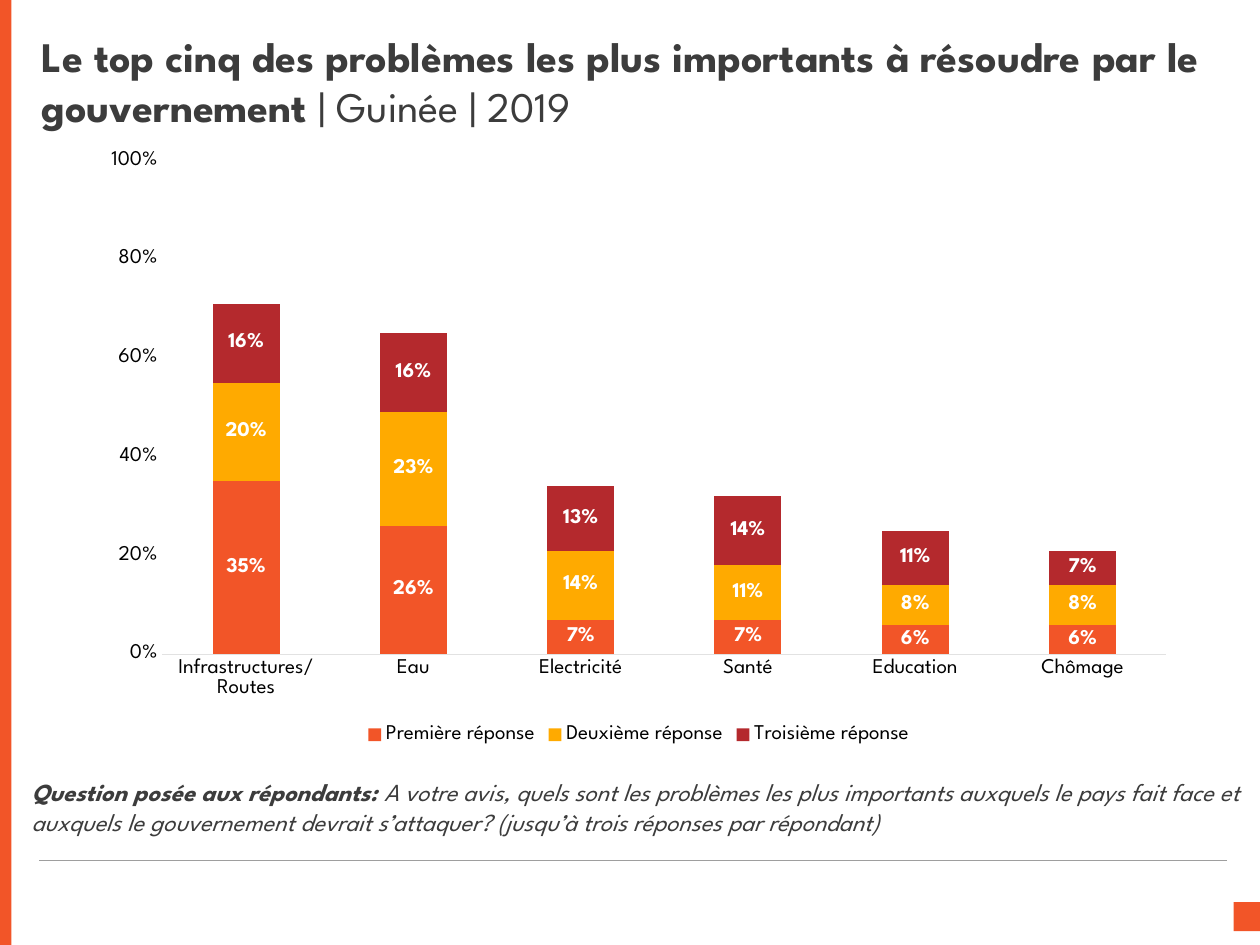
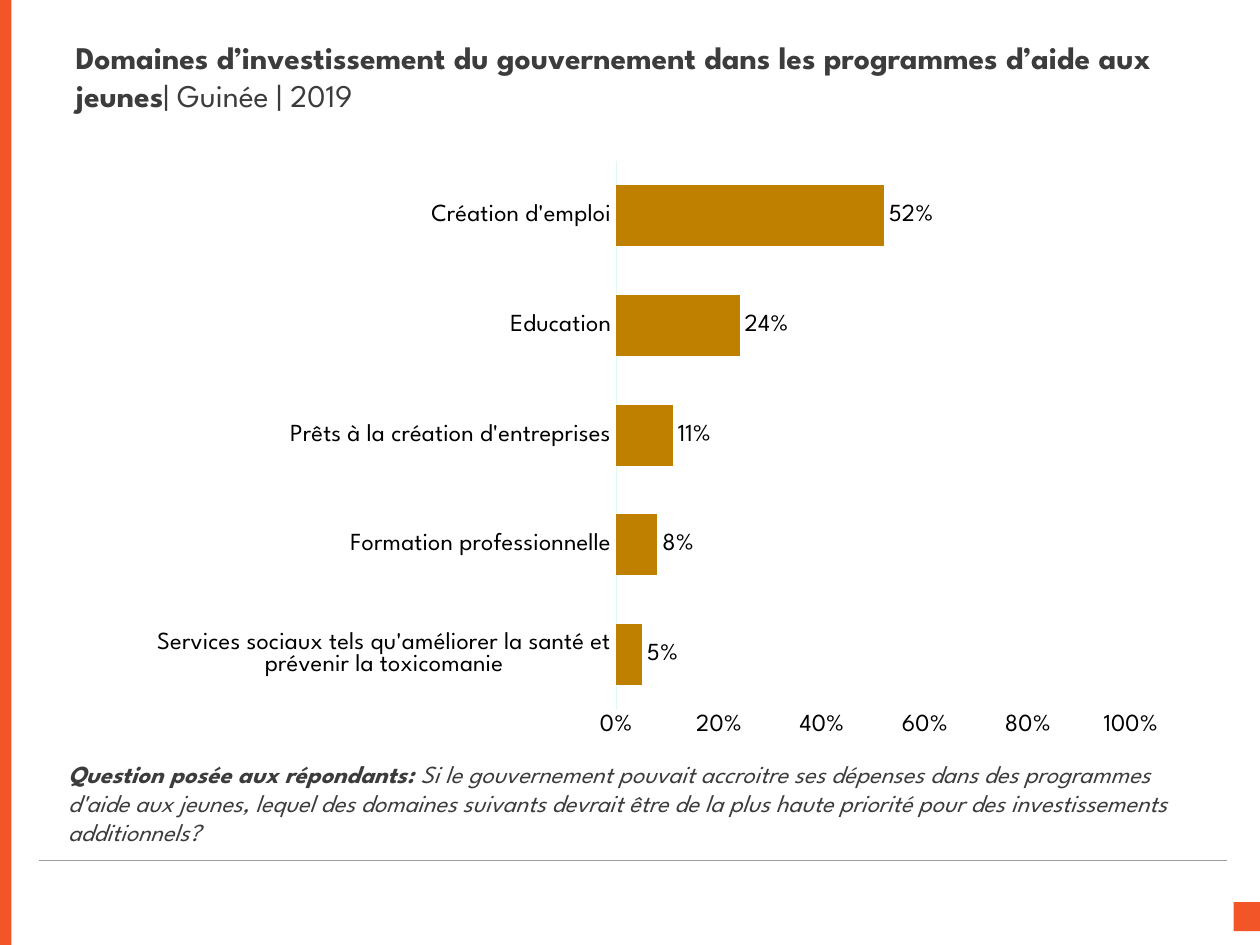
from lxml import etree
from pptx import Presentation
from pptx.chart.data import CategoryChartData
from pptx.dml.color import RGBColor
from pptx.enum.chart import XL_CHART_TYPE, XL_LABEL_POSITION, XL_LEGEND_POSITION, XL_TICK_MARK
from pptx.enum.shapes import MSO_CONNECTOR, MSO_SHAPE
from pptx.enum.text import MSO_ANCHOR, MSO_AUTO_SIZE, PP_ALIGN
from pptx.oxml.ns import qn
from pptx.util import Inches, Pt

COLUMNS = XL_CHART_TYPE.COLUMN_STACKED
BARS = XL_CHART_TYPE.BAR_CLUSTERED
CENTER = XL_LABEL_POSITION.CENTER
OUTSIDE = XL_LABEL_POSITION.OUTSIDE_END
BOTTOM = XL_LEGEND_POSITION.BOTTOM
NO_TICK = XL_TICK_MARK.NONE
RECTANGLE = MSO_SHAPE.RECTANGLE
STRAIGHT = MSO_CONNECTOR.STRAIGHT
TOP, MIDDLE = MSO_ANCHOR.TOP, MSO_ANCHOR.MIDDLE
LEFT = PP_ALIGN.LEFT
NO_FIT = MSO_AUTO_SIZE.NONE

FONT = "League Spartan"
ORANGE, AMBER, RED, OCHRE = "F25528", "FFAA00", "B4292D", "BF8000"
INK, RULE, BLACK, WHITE = "3C3C3C", "9E9E9E", "000000", "FFFFFF"
PERCENT = "0%"
PLACE = "| Guinée | 2019"
QUESTION = "Question posée aux répondants: "


def color(hex_text):
    return RGBColor.from_string(hex_text)


def inches(box):
    return [Inches(value) for value in box]


def format_font(font, size, ink, bold=False, italic=False):
    font.name = FONT
    font.size = Pt(size)
    font.bold = bold
    font.italic = italic
    font.color.rgb = color(ink)


def add_text(para, text, **style):
    span = para.add_run()
    span.text = text
    format_font(span.font, **style)


def fill_placeholder(holder, box, strong, plain, anchor, size, italic=False):
    holder.left, holder.top, holder.width, holder.height = inches(box)
    frame = holder.text_frame
    frame.word_wrap = True
    frame.auto_size = NO_FIT
    frame.vertical_anchor = anchor
    para = frame.paragraphs[0]
    para.alignment = LEFT
    para.line_spacing = 1.0
    para.space_before = Pt(0)
    settings = para._p.get_or_add_pPr()
    settings.set("marL", "0")
    settings.set("indent", "0")
    etree.SubElement(settings, qn("a:buNone"))
    add_text(para, strong, size=size, ink=INK, bold=True, italic=italic)
    add_text(para, plain, size=size, ink=INK, italic=italic)


def add_block(page, box):
    block = page.shapes.add_shape(RECTANGLE, *inches(box))
    block.shadow.inherit = False
    block.fill.solid()
    block.fill.fore_color.rgb = color(ORANGE)
    block.line.fill.background()


def add_frame(page):
    add_block(page, (9.79, 7.16, 0.22, 0.23))
    rule = page.shapes.add_connector(STRAIGHT, *inches((0.31, 6.83, 9.74, 6.83)))
    rule.line.color.rgb = color(RULE)
    rule.line.width = Pt(0.25)
    etree.SubElement(rule._element.spPr, qn("a:effectLst"))
    add_block(page, (0, 0, 0.09, 7.5))


def style_axes(chart, size, line):
    for axis in (chart.category_axis, chart.value_axis):
        axis.major_tick_mark = axis.minor_tick_mark = NO_TICK
        axis.has_major_gridlines = False
        format_font(axis.tick_labels.font, size, BLACK)
    chart.category_axis.format.line.color.rgb = color(line)
    chart.category_axis.format.line.width = Pt(0.75)
    scale = chart.value_axis
    scale.minimum_scale, scale.maximum_scale, scale.major_unit = 0, 1, 0.2
    scale.format.line.fill.background()
    scale.tick_labels.number_format = PERCENT
    scale.tick_labels.number_format_is_linked = False


def place_plot(chart, x, y, w, h):
    area = chart._chartSpace.find(".//" + qn("c:plotArea"))
    layout = area.find(qn("c:layout"))
    if layout is None:
        layout = etree.Element(qn("c:layout"))
        area.insert(0, layout)
    manual = etree.SubElement(layout, qn("c:manualLayout"))
    parts = [("layoutTarget", "inner"), ("xMode", "edge"), ("yMode", "edge"),
             ("x", x), ("y", y), ("w", w), ("h", h)]
    for tag, value in parts:
        etree.SubElement(manual, qn("c:" + tag)).set("val", str(value))


def add_percent_chart(page, box, kind, categories, answers, size, line, gap,
                      label_ink, label_place, bold=False):
    data = CategoryChartData(number_format=PERCENT)
    data.categories = categories
    for name, values, _ in answers:
        data.add_series(name, values)
    chart = page.shapes.add_chart(kind, *inches(box), data).chart
    chart.has_title = False
    chart.has_legend = len(answers) > 1
    format_font(chart.font, size, BLACK)
    if chart.has_legend:
        chart.legend.position = BOTTOM
        chart.legend.include_in_layout = False
        format_font(chart.legend.font, size, BLACK)
    style_axes(chart, size, line)
    plot = chart.plots[0]
    plot.gap_width = gap
    plot.vary_by_categories = False
    for series, (_, _, fill) in zip(plot.series, answers):
        series.format.fill.solid()
        series.format.fill.fore_color.rgb = color(fill)
        labels = series.data_labels
        labels.show_value = True
        labels.position = label_place
        labels.number_format = PERCENT
        labels.number_format_is_linked = False
        format_font(labels.font, size, label_ink, bold)
    return chart


def add_page(deck, title, title_box, title_size, question, question_box):
    page = deck.slides.add_slide(deck.slide_layouts[1])
    add_frame(page)
    fill_placeholder(page.shapes.title, title_box, title, PLACE, MIDDLE, title_size)
    fill_placeholder(page.placeholders[1], question_box, QUESTION, question, TOP, 14, True)
    return page


def add_problems_page(deck):
    page = add_page(
        deck,
        "Le top cinq des problèmes les plus importants à résoudre par le gouvernement ",
        (0.23, 0.31, 9.6, 0.66), 24,
        "A votre avis, quels sont les problèmes les plus importants auxquels le pays fait face "
        "et auxquels le gouvernement devrait s’attaquer? (jusqu’à trois réponses par répondant)",
        (0.15, 6.12, 9.85, 0.56))
    problems = ["Infrastructures/\nRoutes", "Eau", "Electricité", "Santé", "Education", "Chômage"]
    answers = [
        ("Première réponse", (0.35, 0.26, 0.07, 0.07, 0.06, 0.06), ORANGE),
        ("Deuxième réponse", (0.2, 0.23, 0.14, 0.11, 0.08, 0.08), AMBER),
        ("Troisième réponse", (0.16, 0.16, 0.13, 0.14, 0.11, 0.07), RED),
    ]
    chart = add_percent_chart(page, (0.71, 1.1, 8.72, 4.85), COLUMNS, problems, answers,
                              size=12, line="E2E2E2", gap=150,
                              label_ink=WHITE, label_place=CENTER, bold=True)
    chart.plots[0].overlap = 100


def add_investment_page(deck):
    page = add_page(
        deck,
        "Domaines d’investissement du gouvernement dans les programmes d’aide aux jeunes",
        (0.5, 0.3, 9.26, 0.61), 18,
        "Si le gouvernement pouvait accroitre ses dépenses dans des programmes d'aide aux jeunes, "
        "lequel des domaines suivants devrait être de la plus haute priorité pour des "
        "investissements additionnels?",
        (0.44, 5.97, 9.06, 0.78))
    areas = ["Services sociaux tels qu'améliorer la santé et prévenir la toxicomanie",
             "Formation professionnelle", "Prêts à la création d'entreprises",
             "Education", "Création d'emploi"]
    answers = [("Series 1", (0.05, 0.08, 0.11, 0.24, 0.52), OCHRE)]
    chart = add_percent_chart(page, (0.72, 1.18, 8.69, 4.79), BARS, areas, answers,
                              size=14, line="DDF9F1", gap=80,
                              label_ink=BLACK, label_place=OUTSIDE)
    place_plot(chart, 0.48, 0.02, 0.47, 0.91)


def main():
    deck = Presentation()
    deck.slide_width, deck.slide_height = Inches(10), Inches(7.5)
    add_problems_page(deck)
    add_investment_page(deck)
    deck.save("out.pptx")


if __name__ == "__main__":
    main()
